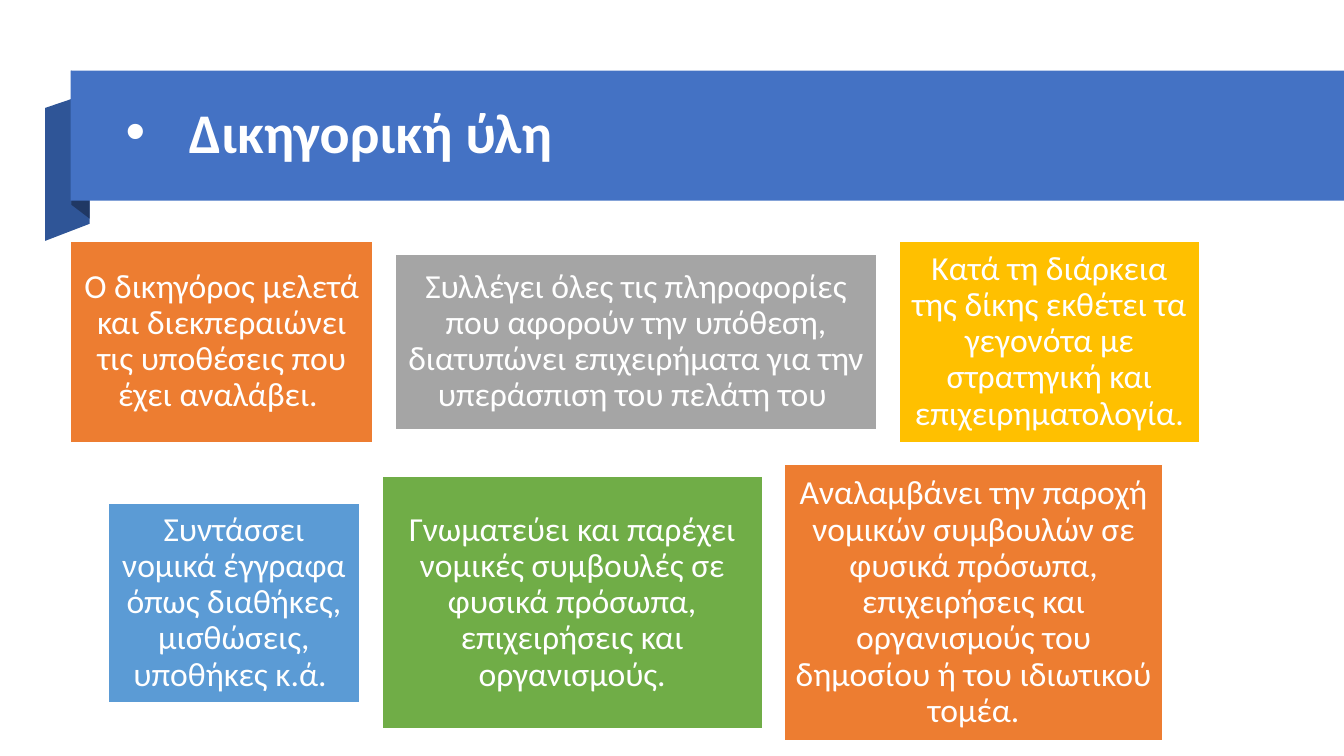
from lxml.etree import SubElement
from pptx import Presentation
from pptx.dml.color import RGBColor
from pptx.enum.shapes import MSO_SHAPE as Shape
from pptx.enum.text import MSO_ANCHOR as Anchor, PP_ALIGN as Align
from pptx.oxml.ns import qn
from pptx.util import Cm, Pt

COLOURS = {
    "white": "FFFFFF", "banner": "4472C4", "fold": "2F5597", "fold_inside": "203864",
    "orange": "ED7D31", "grey": "A5A5A5", "gold": "FFC000", "blue": "5B9BD5", "green": "70AD47",
}
TITLE = "Δικηγορική ύλη"
TITLE_BOX = (2.92, 2.18, 28.63, 2.44)
BANNER_BOX = (1.78, 1.78, 32.09, 3.28)
FOLDS = [
    ("fold", [(2.26, 5.64), (1.14, 6.07), (1.14, 2.72), (2.26, 2.34)]),
    ("fold_inside", [(2.26, 5.51), (1.8, 5.16), (1.8, 1.78), (2.26, 2.16)]),
]
CARD_GAP = 0.56
ROWS = [
    {"left": 1.78, "middle": 8.61, "cards": [
        ("orange", 7.62, 5.08, "Ο δικηγόρος μελετά και διεκπεραιώνει τις υποθέσεις που έχει αναλάβει. "),
        ("grey", 12.14, 4.42, "Συλλέγει όλες τις πληροφορίες που αφορούν την υπόθεση, "
                              "διατυπώνει επιχειρήματα για την υπεράσπιση του πελάτη του "),
        ("gold", 7.57, 5.08, "Κατά τη διάρκεια της δίκης εκθέτει τα γεγονότα με στρατηγική "
                             "και επιχειρηματολογία."),
    ]},
    {"left": 2.72, "middle": 15.19, "cards": [
        ("blue", 6.35, 5.03, "Συντάσσει νομικά έγγραφα όπως διαθήκες, μισθώσεις, υποθήκες κ.ά. "),
        ("green", 9.58, 6.35, "Γνωματεύει και παρέχει νομικές συμβουλές σε φυσικά πρόσωπα, "
                              "επιχειρήσεις και οργανισμούς."),
        ("orange", 9.53, 6.96, "Αναλαμβάνει την παροχή νομικών συμβουλών σε φυσικά πρόσωπα, "
                               "επιχειρήσεις και οργανισμούς του δημοσίου ή του ιδιωτικού τομέα."),
    ]},
]
INSET = Cm(0.25)
CARD_FRAME = {
    "margin_left": INSET, "margin_right": INSET, "margin_top": INSET, "margin_bottom": INSET,
}
CARD_PARAGRAPH = {"alignment": Align.CENTER, "line_spacing": 0.9}
TITLE_PARAGRAPH = {"alignment": Align.LEFT, "line_spacing": 0.9}
CARD_FONT = {"name": "Calibri", "size": Pt(24)}
TITLE_FONT = {"name": "Calibri", "size": Pt(40), "bold": True}


def apply_format(target, values):
    for name, value in values.items():
        setattr(target, name, value)


def colour(name):
    return RGBColor.from_string(COLOURS[name])


def paint(shape, fill, line=None):
    shape.shadow.inherit = False
    shape.fill.solid()
    shape.fill.fore_color.rgb = colour(fill)
    if line:
        shape.line.color.rgb = colour(line)
        shape.line.width = Pt(1)
    else:
        shape.line.fill.background()


def write(shape, text, frame_format, paragraph_format, font_format):
    frame = shape.text_frame
    apply_format(frame, {"word_wrap": True, "vertical_anchor": Anchor.MIDDLE, **frame_format})
    paragraph = frame.paragraphs[0]
    apply_format(paragraph, paragraph_format)
    run = paragraph.add_run()
    run.text = text
    apply_format(run.font, font_format)
    run.font.color.rgb = colour("white")
    return paragraph


def add_bullet(paragraph, indent):
    properties = paragraph._p.get_or_add_pPr()
    properties.set("marL", str(indent))
    properties.set("indent", str(-indent))
    SubElement(properties, qn("a:buFont")).set("typeface", "Arial")
    SubElement(properties, qn("a:buChar")).set("char", "•")


def add_banner(shapes):
    for fill, points in FOLDS:
        corners = [(Cm(x), Cm(y)) for x, y in points]
        builder = shapes.build_freeform(*corners[0])
        builder.add_line_segments(corners[1:], close=True)
        paint(builder.convert_to_shape(), fill)
    paint(shapes.add_shape(Shape.RECTANGLE, *map(Cm, BANNER_BOX)), "banner")
    title = shapes.add_textbox(*map(Cm, TITLE_BOX))
    add_bullet(write(title, TITLE, {}, TITLE_PARAGRAPH, TITLE_FONT), Cm(1.59))


def add_row(shapes, row):
    left = row["left"]
    for fill, width, height, text in row["cards"]:
        box = (left, row["middle"] - height / 2, width, height)
        card = shapes.add_shape(Shape.RECTANGLE, *map(Cm, box))
        paint(card, fill, "white")
        write(card, text, CARD_FRAME, CARD_PARAGRAPH, CARD_FONT)
        left += width + CARD_GAP


def main():
    """Build the slide on a lawyer's work and save it."""
    presentation = Presentation()
    apply_format(presentation, {"slide_width": Cm(33.87), "slide_height": Cm(19.05)})
    slide = presentation.slides.add_slide(presentation.slide_layouts[6])
    add_banner(slide.shapes)
    for row in ROWS:
        add_row(slide.shapes, row)
    presentation.save("out.pptx")


if __name__ == "__main__":
    main()
